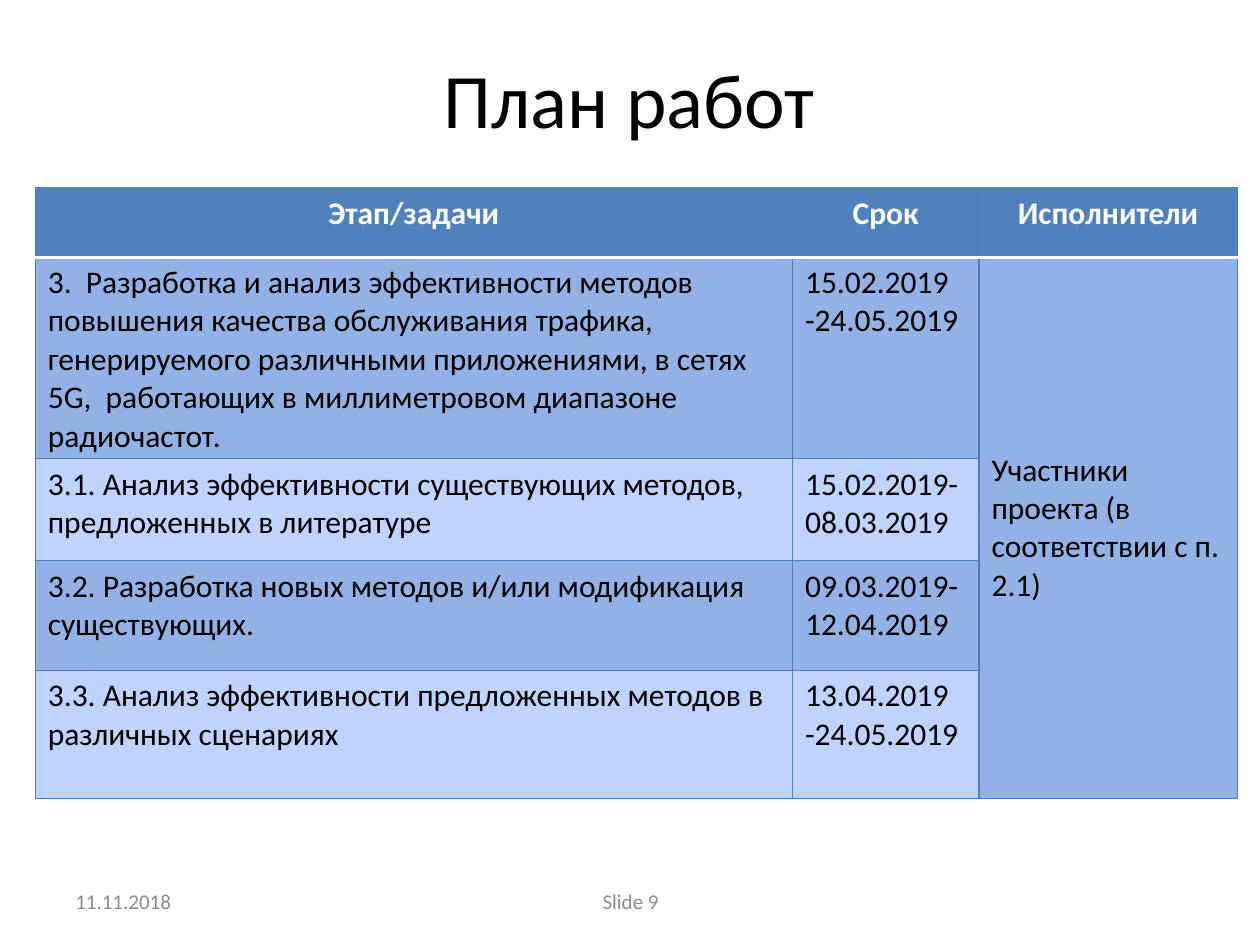
from lxml.etree import SubElement
from pptx import Presentation
from pptx.dml.color import RGBColor
from pptx.enum.text import MSO_ANCHOR, PP_ALIGN
from pptx.oxml.ns import qn
from pptx.util import Inches, Pt

TITLE = "План работ"
DATE = "11.11.2018"
NUMBER = "Slide 9"
HEAD = ("Этап/задачи", "Срок", "Исполнители")
TEAM = "Участники проекта (в соответствии с п. 2.1)"
TASKS = [
    ("3.  Разработка и анализ эффективности методов повышения качества "
     "обслуживания трафика, генерируемого различными приложениями, в сетях "
     "5G,  работающих в миллиметровом диапазоне радиочастот.",
     "15.02.2019 -24.05.2019"),
    ("3.1. Анализ эффективности существующих методов, предложенных в литературе",
     "15.02.2019-08.03.2019"),
    ("3.2. Разработка новых методов и/или модификация существующих.",
     "09.03.2019-12.04.2019"),
    ("3.3. Анализ эффективности предложенных методов в различных сценариях",
     "13.04.2019 -24.05.2019"),
]

THEME = {
    "font": "Calibri",
    "title": 44, "body": 18, "foot": 12,
    "black": "000000", "white": "FFFFFF", "gray": "8C8C8C",
    "head": "4F81BD", "dark": "92B2E5", "light": "BFD3FF", "line": "4B7EBC",
    "thin": 0.75, "thick": 2,
}
WIDTH, HEIGHT = 10, 7.5
LEFT, TOP = 0.28, 1.49
COLS = (6.01, 1.48, 2.05)
ROWS = (0.55, 1.6, 0.81, 0.87, 1.02)
FOOT = 6.95


def write(frame, text, size, color, align=PP_ALIGN.LEFT, bold=False):
    frame.text = text
    frame.word_wrap = True
    for par in frame.paragraphs:
        par.alignment = align
        for run in par.runs:
            font = run.font
            font.name = THEME["font"]
            font.size = Pt(THEME[size])
            font.bold = bold
            font.color.rgb = RGBColor.from_string(THEME[color])


def label(slide, box, text, size, color, align):
    shape = slide.shapes.add_textbox(*map(Inches, box))
    write(shape.text_frame, text, size, color, align)
    shape.text_frame.vertical_anchor = MSO_ANCHOR.MIDDLE


def edge(cell, side, color, width):
    line = SubElement(cell._tc.get_or_add_tcPr(), qn(f"a:ln{side}"),
                      w=str(Pt(THEME[width])))
    fill = SubElement(line, qn("a:solidFill"))
    SubElement(fill, qn("a:srgbClr"), val=THEME[color])


def paint(cell, row):
    """Draw the four borders, then the fill that must follow them."""
    for side in "LRTB":
        rule = (row, side) in ((0, "B"), (1, "T"))
        edge(cell, side, *(("white", "thick") if rule else ("line", "thin")))
    tone = "head" if row == 0 else "dark" if row % 2 else "light"
    cell.fill.solid()
    cell.fill.fore_color.rgb = RGBColor.from_string(THEME[tone])


def plan(slide):
    box = (LEFT, TOP, sum(COLS), sum(ROWS))
    table = slide.shapes.add_table(len(ROWS), len(COLS),
                                   *map(Inches, box)).table
    for col, width in zip(table.columns, COLS):
        col.width = Inches(width)
    for row, height in zip(table.rows, ROWS):
        row.height = Inches(height)
    for r in range(len(ROWS)):
        for c in range(len(COLS)):
            paint(table.cell(r, c), r)

    for c, text in enumerate(HEAD):
        write(table.cell(0, c).text_frame, text, "body", "white",
              PP_ALIGN.CENTER, True)
    for r, task in enumerate(TASKS, 1):
        for c, text in enumerate(task):
            write(table.cell(r, c).text_frame, text, "body", "black")

    last = len(COLS) - 1
    team = table.cell(1, last)
    team.merge(table.cell(len(TASKS), last))
    write(team.text_frame, TEAM, "body", "black")
    team.vertical_anchor = MSO_ANCHOR.MIDDLE


def main():
    deck = Presentation()
    deck.slide_width, deck.slide_height = Inches(WIDTH), Inches(HEIGHT)
    slide = deck.slides.add_slide(deck.slide_layouts[6])
    label(slide, (0.08, 0.29, 9.83, 0.97), TITLE, "title", "black",
          PP_ALIGN.CENTER)
    label(slide, (3.42, FOOT, 3.17, 0.4), NUMBER, "foot", "gray",
          PP_ALIGN.CENTER)
    label(slide, (0.5, FOOT, 2.33, 0.4), DATE, "foot", "gray", PP_ALIGN.LEFT)
    plan(slide)
    deck.save("out.pptx")


if __name__ == "__main__":
    main()
